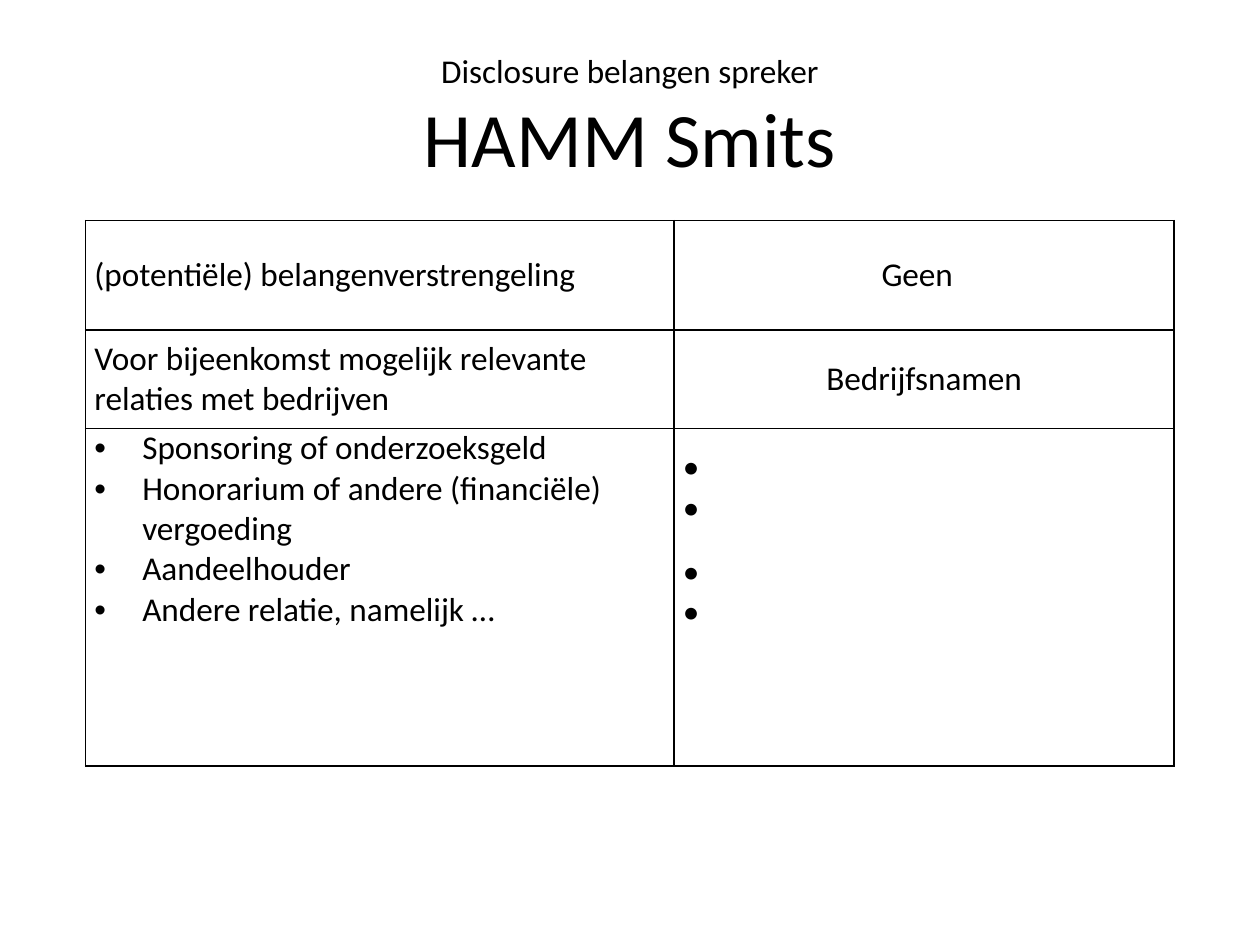
from dataclasses import dataclass

from lxml import etree
from pptx import Presentation
from pptx.dml.color import RGBColor
from pptx.enum.text import MSO_ANCHOR, PP_ALIGN
from pptx.oxml.ns import qn
from pptx.util import Inches, Pt

LEFT, CENTER = PP_ALIGN.LEFT, PP_ALIGN.CENTER
TOP, MIDDLE = MSO_ANCHOR.TOP, MSO_ANCHOR.MIDDLE


@dataclass(frozen=True)
class Theme:
    font: str = "Calibri"
    ink: str = "000000"
    body_size: float = 19
    name_size: float = 44
    border_width: float = 1
    cell_margin: float = 0.07
    bullet_indent: float = 0.38


class DisclosureSlide:
    def __init__(self, presentation, theme):
        self.theme = theme
        self.slide = presentation.slides.add_slide(presentation.slide_layouts[6])

    def run(self, paragraph, text, size):
        run = paragraph.add_run()
        run.text = text
        run.font.name = self.theme.font
        run.font.size = Pt(size)
        run.font.color.rgb = RGBColor.from_string(self.theme.ink)

    def title(self, left, top, width, height, subject, speaker):
        frame = self.slide.shapes.add_textbox(
            Inches(left), Inches(top), Inches(width), Inches(height)).text_frame
        frame.word_wrap = True
        frame.vertical_anchor = MIDDLE
        heading = frame.paragraphs[0]
        heading.alignment = CENTER
        self.run(heading, subject, self.theme.body_size)
        heading.add_line_break()
        self.run(heading, speaker, self.theme.name_size)

    def table(self, left, top, widths, heights):
        table = self.slide.shapes.add_table(
            len(heights), len(widths), Inches(left), Inches(top),
            Inches(sum(widths)), Inches(sum(heights))).table
        table.first_row = table.horz_banding = False
        for column, width in zip(table.columns, widths):
            column.width = Inches(width)
        for row, height in zip(table.rows, heights):
            row.height = Inches(height)
        return table

    def cell(self, cell, lines, align=LEFT, anchor=MIDDLE, bulleted=False,
             top_margin=0, right_margin=None):
        margin = self.theme.cell_margin
        cell.margin_left = Inches(margin)
        cell.margin_right = Inches(margin if right_margin is None else right_margin)
        cell.margin_top, cell.margin_bottom = Inches(top_margin), 0
        cell.vertical_anchor = anchor
        self.borders(cell)
        cell.fill.background()
        frame = cell.text_frame
        for index, line in enumerate(lines):
            paragraph = frame.add_paragraph() if index else frame.paragraphs[0]
            paragraph.alignment = align
            if bulleted:
                self.bullet(paragraph)
            self.run(paragraph, line, self.theme.body_size)

    def borders(self, cell):
        properties = cell._tc.get_or_add_tcPr()
        for side in ("a:lnL", "a:lnR", "a:lnT", "a:lnB"):
            line = etree.SubElement(properties, qn(side),
                                    w=str(Pt(self.theme.border_width)))
            fill = etree.SubElement(line, qn("a:solidFill"))
            etree.SubElement(fill, qn("a:srgbClr"), val=self.theme.ink)

    def bullet(self, paragraph):
        indent = Inches(self.theme.bullet_indent)
        properties = paragraph._p.get_or_add_pPr()
        properties.set("marL", str(indent))
        properties.set("indent", str(-indent))
        etree.SubElement(properties, qn("a:buFont"), typeface="Arial")
        etree.SubElement(properties, qn("a:buChar"), char="•")


def main():
    presentation = Presentation()
    presentation.slide_width, presentation.slide_height = Inches(10), Inches(7.5)
    page = DisclosureSlide(presentation, Theme())

    # Heading with the speaker's name
    page.title(0.5, 0.3, 9, 1.25, "Disclosure belangen spreker", "HAMM Smits")

    # Disclosure table
    disclosure = page.table(0.68, 1.75, widths=(4.67, 3.97), heights=(0.87, 0.78, 2.68))

    # Conflict of interest; the wider right margin sets the answer off centre
    page.cell(disclosure.cell(0, 0), ["(potentiële) belangenverstrengeling"])
    page.cell(disclosure.cell(0, 1), ["Geen"], align=CENTER, right_margin=0.18)

    # Column headings for the relations
    page.cell(disclosure.cell(1, 0),
              ["Voor bijeenkomst mogelijk relevante relaties met bedrijven"])
    page.cell(disclosure.cell(1, 1), ["Bedrijfsnamen"], align=CENTER)

    # Kinds of relation, with open marks for the company names
    relations = ["Sponsoring of onderzoeksgeld",
                 "Honorarium of andere (financiële) vergoeding",
                 "Aandeelhouder",
                 "Andere relatie, namelijk …"]
    page.cell(disclosure.cell(2, 0), relations, anchor=TOP, bulleted=True)
    companies = disclosure.cell(2, 1)
    page.cell(companies, ["•"] * len(relations), anchor=TOP, top_margin=0.15)
    companies.text_frame.paragraphs[2].space_before = Pt(13.5)

    presentation.save("out.pptx")


if __name__ == "__main__":
    main()
